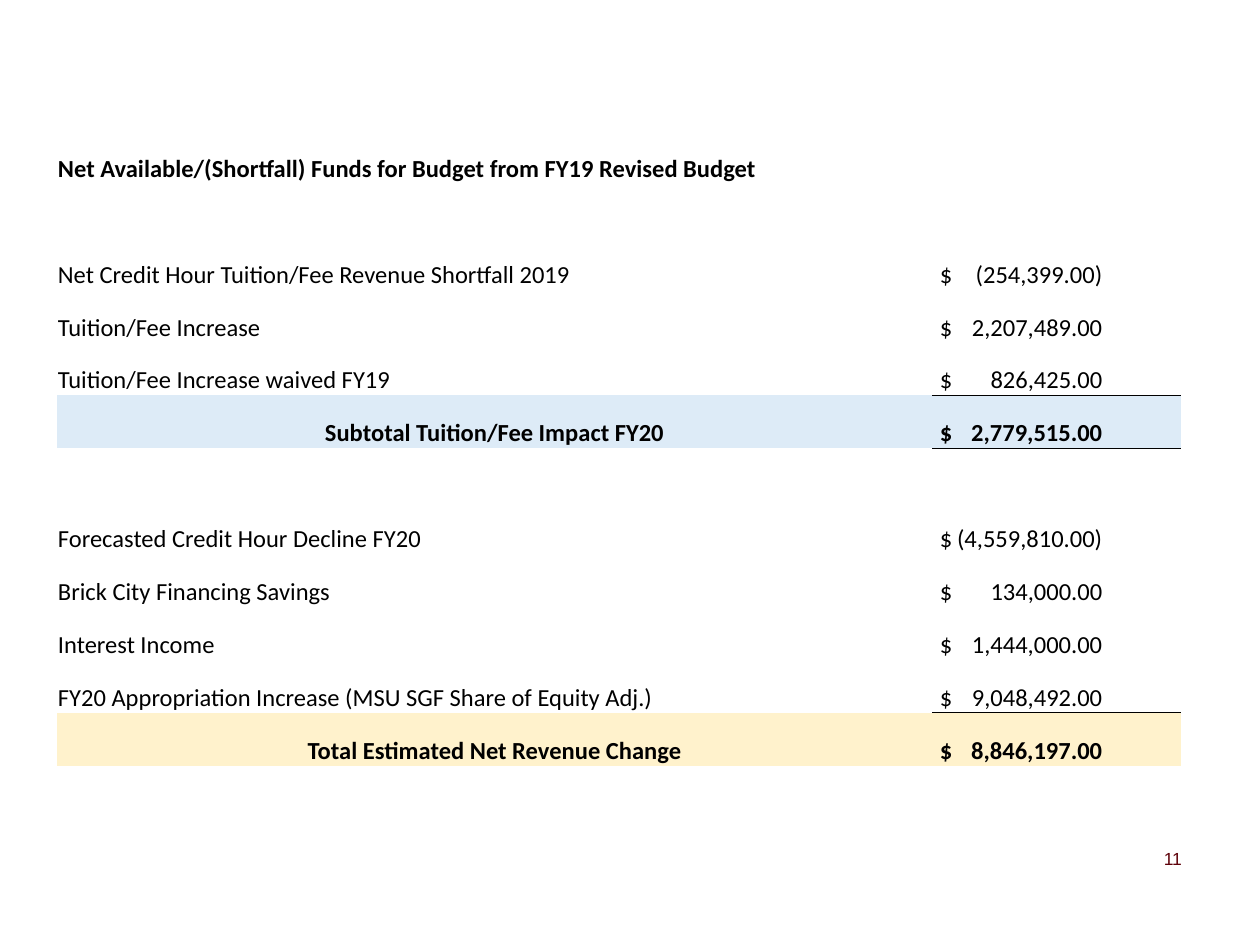
from pptx import Presentation
from pptx.dml.color import RGBColor as RGB
from pptx.enum.text import MSO_ANCHOR as Anchor, PP_ALIGN as Align
from pptx.oxml import parse_xml
from pptx.oxml.ns import nsdecls, qn
from pptx.util import Inches, Pt

COLORS = {"ink": "000000", "page": "5E0009", "blue": "DDEBF7", "gold": "FFF2CC"}
PLAIN = "{2D5ABB26-0587-4C30-8999-92F81FD0307C}"  # table style without grid

# label, amount, fill of a sum row
ROWS = [
    ("Net Available/(Shortfall) Funds for Budget from FY19 Revised Budget", "", None),
    ("", "", None),
    ("Net Credit Hour Tuition/Fee Revenue Shortfall 2019", "(254,399.00)", None),
    ("Tuition/Fee Increase", "2,207,489.00", None),
    ("Tuition/Fee Increase waived FY19", "826,425.00", None),
    ("Subtotal Tuition/Fee Impact FY20", "2,779,515.00", "blue"),
    ("", "", None),
    ("Forecasted Credit Hour Decline FY20", "(4,559,810.00)", None),
    ("Brick City Financing Savings", "134,000.00", None),
    ("Interest Income", "1,444,000.00", None),
    ("FY20 Appropriation Increase (MSU SGF Share of Equity Adj.)", "9,048,492.00", None),
    ("Total Estimated Net Revenue Change", "8,846,197.00", "gold"),
]


def style(para, font, size, color, bold=False):
    for run in para.runs:
        run.font.name = font
        run.font.size = Pt(size)
        run.font.bold = bold
        run.font.color.rgb = RGB.from_string(COLORS[color])


def rule(cell, side):
    """Draw a thin border on one side (T or B) of a cell."""
    cell._tc.get_or_add_tcPr().insert(0, parse_xml(
        f'<a:ln{side} {nsdecls("a")} w="{Pt(0.5)}"><a:solidFill>'
        f'<a:srgbClr val="{COLORS["ink"]}"/></a:solidFill></a:ln{side}>'))


prs = Presentation()
prs.slide_width, prs.slide_height = Inches(10), Inches(7.5)
slide = prs.slides.add_slide(prs.slide_layouts[6])

# Page number
box = slide.shapes.add_textbox(Inches(8.88), Inches(6.63), Inches(0.5), Inches(0.37))
frame = box.text_frame
frame.word_wrap = True
frame.vertical_anchor = Anchor.MIDDLE
frame.margin_left = frame.margin_right = frame.margin_top = frame.margin_bottom = 0
frame.text = "11"
frame.paragraphs[0].alignment = Align.RIGHT
style(frame.paragraphs[0], "Arial", 10, "page")

# Budget table
table = slide.shapes.add_table(len(ROWS), 2, Inches(0.45), Inches(1.04),
                               Inches(8.92), Inches(0.42 * len(ROWS))).table
table.first_row = table.horz_banding = False
table._tbl.tblPr.find(qn("a:tableStyleId")).text = PLAIN
table.columns[0].width, table.columns[1].width = Inches(6.95), Inches(1.97)

for i, (label, amount, fill) in enumerate(ROWS):
    table.rows[i].height = Inches(0.42)
    texts = (label, f"$\t{amount}" if amount else "")
    for j, text in enumerate(texts):
        cell = table.cell(i, j)
        cell.vertical_anchor = Anchor.BOTTOM
        cell.margin_left = Inches(0.06 if j else 0.01)
        cell.margin_right = cell.margin_top = Inches(0.01)
        cell.margin_bottom = 0
        if fill:
            cell.fill.solid()
            cell.fill.fore_color.rgb = RGB.from_string(COLORS[fill])
        else:
            cell.fill.background()
        para = cell.text_frame.paragraphs[0]
        para.text = text
        if j and amount:
            para._p.get_or_add_pPr().append(parse_xml(
                f'<a:tabLst {nsdecls("a")}><a:tab pos="{Inches(1.29)}" algn="r"/></a:tabLst>'))
        elif fill:
            para.alignment = Align.CENTER
        style(para, "Calibri", 14, "ink", i == 0 or bool(fill))
    if fill:
        rule(table.cell(i - 1, 1), "B")
        rule(table.cell(i, 1), "T")

for i in range(2):
    table.cell(i, 0).merge(table.cell(i, 1))

prs.save("out.pptx")
